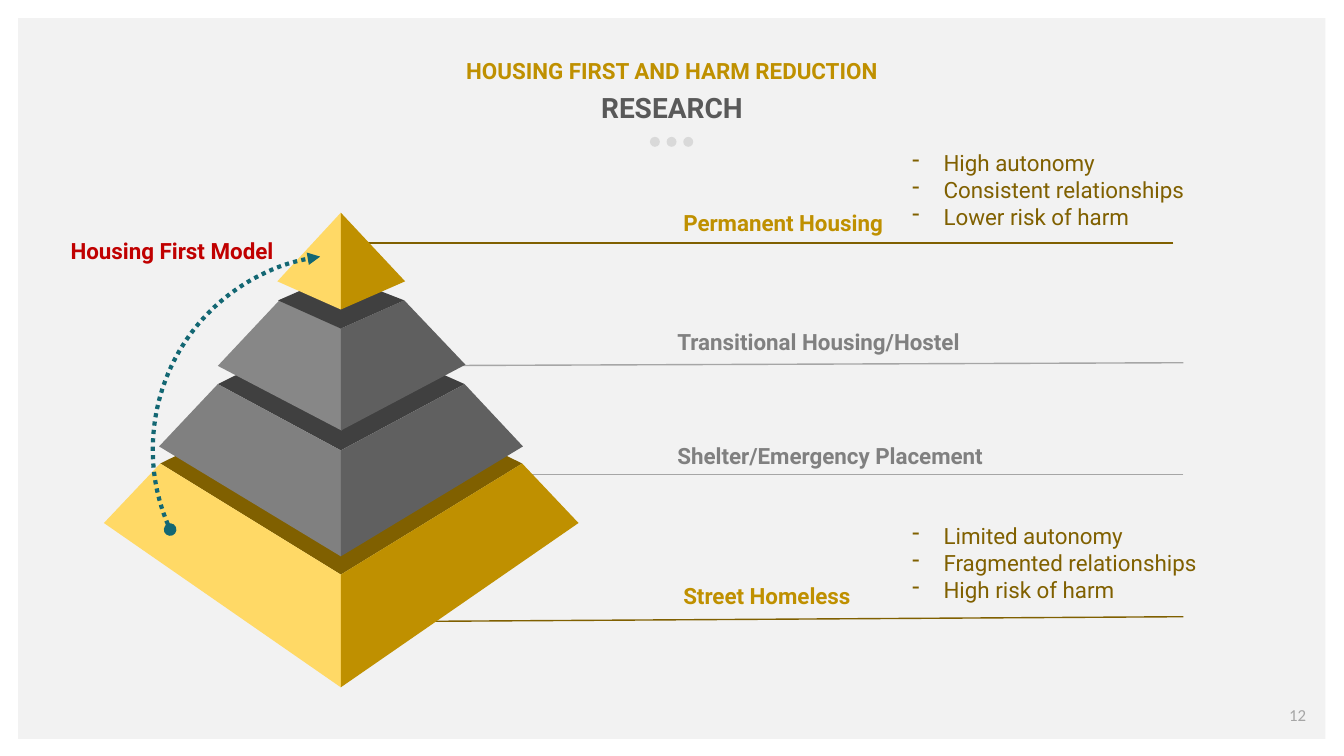
"""Build the Housing First pyramid slide."""
from lxml import etree
from pptx import Presentation
from pptx import util as u
from pptx.dml.color import RGBColor
from pptx.enum import dml, shapes, text
from pptx.oxml import ns

TITLE = [("HOUSING FIRST AND HARM REDUCTION", 16, "BF9000"), ("RESEARCH", 20, "595959")]
LABELS = [
    ("Shelter/Emergency Placement", (17.07, 11.15, 7.8, 0.69), "808080"),
    ("Transitional Housing/Hostel", (17.07, 8.28, 7.24, 0.69), "808080"),
    ("Street Homeless", (17.22, 14.68, 7.92, 0.69), "BF9000"),
    ("Permanent Housing", (17.22, 5.26, 7.92, 0.69), "BF9000"),
    ("Housing First Model", (1.78, 5.97, 5.36, 0.69), "C00000"),
]
TRAITS = [
    (["Limited autonomy", "Fragmented relationships", "High risk of harm"],
     (22.99, 13.16, 7.92, 2.06)),
    (["High autonomy", "Consistent relationships", "Lower risk of harm"],
     (22.99, 3.76, 8.33, 2.06)),
]
LEADERS = [
    ((29.82, 11.96), (8.76, 11.96), "A6A6A6"),
    ((29.82, 9.14), (8.76, 9.22), "A6A6A6"),
    ((29.82, 15.54), (8.61, 15.67), "806000"),
    ((29.57, 6.12), (8.76, 6.12), "806000"),
]
AXIS = 8.59
FACES = [
    ("806000", [(4.04, 11.68), (5.64, 10.9), (AXIS, 12.57), (11.76, 11),
                (13.16, 11.68), (AXIS, 14.48)]),
    ("FFD966", [(2.62, 13.18), (4.04, 11.68), (AXIS, 14.48), (AXIS, 17.32)]),
    ("BF9000", [(AXIS, 14.48), (13.16, 11.68), (14.58, 13.18), (AXIS, 17.32)]),
    ("404040", [(5.49, 9.68), (6.12, 9.37), (AXIS, 10.46), (10.97, 9.35),
                (11.71, 9.68), (AXIS, 11.35)]),
    ("808080", [(4.01, 11.25), (AXIS, 14.02), (AXIS, 11.35), (5.49, 9.68)]),
    ("606060", [(AXIS, 14.02), (AXIS, 11.35), (11.71, 9.68), (13.18, 11.25)]),
    ("878787", [(5.49, 9.22), (8.61, 10.85), (8.61, 8.28), (7.04, 7.57)]),
    ("5F5F5F", [(AXIS, 8.28), (10.19, 7.57), (11.73, 9.19), (AXIS, 10.85)]),
    ("404040", [(7.01, 7.57), (7.65, 7.29), (AXIS, 7.57), (9.47, 7.29),
                (10.19, 7.57), (AXIS, 8.28)]),
    ("FFD966", [(6.99, 7.09), (AXIS, 5.36), (AXIS, 7.8)]),
    ("BF9000", [(AXIS, 5.36), (10.21, 7.09), (AXIS, 7.8)]),
]


def color(value):
    return RGBColor.from_string(value)


def lengths(values):
    return [u.Cm(value) for value in values]


def fill_plain(shape, value):
    shape.shadow.inherit = False
    shape.fill.solid()
    shape.fill.fore_color.rgb = color(value)
    shape.line.fill.background()


def add_plain(slide, kind, box, value):
    fill_plain(slide.shapes.add_shape(kind, *lengths(box)), value)


def add_face(slide, value, points):
    corners = [lengths(point) for point in points]
    builder = slide.shapes.build_freeform(*corners[0], scale=1.0)
    builder.add_line_segments(corners[1:], close=True)
    fill_plain(builder.convert_to_shape(), value)


def style_line(shape, value, width, **ends):
    shape.line.color.rgb = color(value)
    shape.line.width = u.Pt(width)
    outline = shape.line._get_or_add_ln()
    for name, kind in ends.items():
        etree.SubElement(outline, ns.qn(f"a:{name}"), type=kind)


def add_leader(slide, start, end, value):
    leader = slide.shapes.add_connector(
        shapes.MSO_CONNECTOR.STRAIGHT, *lengths(start), *lengths(end))
    style_line(leader, value, 1, tailEnd="oval")
    etree.SubElement(leader._element.spPr, ns.qn("a:effectLst"))


def add_arc(slide):
    arc = slide.shapes.add_shape(shapes.MSO_SHAPE.ARC, *lengths((3.84, 6.43, 9.83, 9.8)))
    arc.shadow.inherit = False
    arc.fill.background()
    arc.rotation = 242.7
    arc.adjustments[0] = 163.83
    arc.adjustments[1] = 11.57
    arc.line.dash_style = dml.MSO_LINE.ROUND_DOT
    style_line(arc, "136773", 3, headEnd="oval", tailEnd="triangle")


def add_text(slide, box, lines, font="Roboto", bold=False, align=None, bullet=False):
    frame = slide.shapes.add_textbox(*lengths(box)).text_frame
    frame.word_wrap = True
    frame.margin_left = frame.margin_right = frame.margin_top = frame.margin_bottom = 0
    frame.text = "\n".join(line for line, _, _ in lines)
    for paragraph, (_, size, value) in zip(frame.paragraphs, lines):
        paragraph.alignment = align
        if bullet:
            properties = paragraph._p.get_or_add_pPr()
            properties.set("marL", str(u.Cm(0.79)))
            properties.set("indent", str(-u.Cm(0.79)))
            etree.SubElement(properties, ns.qn("a:buChar"), char="-")
        for run in paragraph.runs:
            run.font.name = font
            run.font.size = u.Pt(size)
            run.font.bold = bold
            run.font.color.rgb = color(value)
    return frame


def main():
    presentation = Presentation()
    presentation.slide_width, presentation.slide_height = lengths((33.87, 19.05))
    slide = presentation.slides.add_slide(presentation.slide_layouts[6])
    center = text.PP_ALIGN.CENTER

    add_plain(slide, shapes.MSO_SHAPE.RECTANGLE, (0.46, 0.46, 32.94, 18.16), "F2F2F2")
    number = add_text(slide, (32.03, 17.63, 1.35, 0.76), [("12", 12, "A6A6A6")],
                      font="Calibri", align=center)
    number.margin_top = u.Cm(0.13)
    for leader in LEADERS:
        add_leader(slide, *leader)
    for traits, box in TRAITS:
        add_text(slide, box, [(trait, 16, "806000") for trait in traits], bullet=True)
    for value, points in FACES:
        add_face(slide, value, points)
    add_arc(slide)
    for label, box, value in LABELS:
        add_text(slide, box, [(label, 16, value)], bold=True)
    title = add_text(slide, (1.02, 1.42, 31.83, 1.73), TITLE, bold=True, align=center)
    title.vertical_anchor = text.MSO_ANCHOR.MIDDLE
    title.paragraphs[0].space_after = u.Pt(5)
    for index in range(3):
        add_plain(slide, shapes.MSO_SHAPE.OVAL,
                  (16.38 + 0.42 * index, 3.45, 0.25, 0.25), "D9D9D9")
    presentation.save("out.pptx")


if __name__ == "__main__":
    main()
